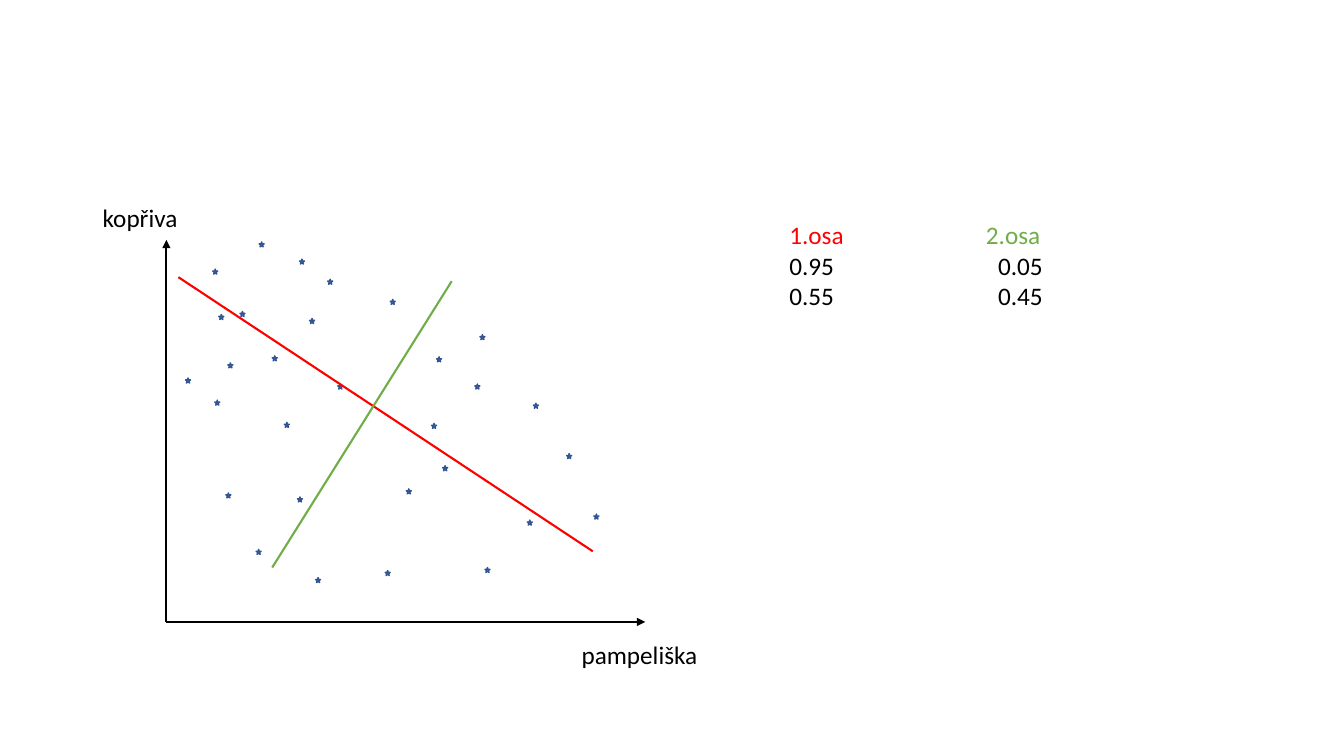
from lxml.etree import SubElement
from pptx import Presentation
from pptx.dml.color import RGBColor
from pptx.enum.shapes import MSO_CONNECTOR, MSO_SHAPE
from pptx.enum.text import MSO_AUTO_SIZE
from pptx.oxml.ns import qn
from pptx.util import Pt

PX = 9144
BLACK = RGBColor(0x00, 0x00, 0x00)
RED = RGBColor(0xFF, 0x00, 0x00)
GREEN = RGBColor(0x70, 0xAD, 0x47)
BLUE = RGBColor(0x44, 0x72, 0xC4)
NAVY = RGBColor(0x32, 0x54, 0x91)

STAR = 5
STARS = [
    (46, 29), (19, 137), (142, 78), (92, 2), (73, 71), (61, 122),
    (48, 159), (222, 59), (59, 251), (170, 143), (306, 143), (263, 182),
    (238, 247), (274, 224), (217, 328), (148, 335), (424, 272), (316, 325),
    (364, 162), (358, 278), (52, 74), (132, 19), (397, 212), (105, 115),
    (160, 39), (117, 181), (311, 94), (89, 307), (268, 116), (130, 255),
]
SCORES = [
    (195, [("1.osa", RED), ("\t2.osa", GREEN)]),
    (207, [("0.95\t0.05", BLACK)]),
    (207, [("0.55\t0.45", BLACK)]),
]


def scale(*sizes):
    """Turn px lengths into EMU."""
    return [size * PX for size in sizes]


def add_text(slide, box, rows, size=18, font="Calibri"):
    """Write rows of (tab stop, coloured runs) in a text box."""
    frame = slide.shapes.add_textbox(*scale(*box)).text_frame
    frame.word_wrap = True
    frame.auto_size = MSO_AUTO_SIZE.SHAPE_TO_FIT_TEXT
    for index, (stop, runs) in enumerate(rows):
        para = frame.add_paragraph() if index else frame.paragraphs[0]
        if stop:
            tabs = SubElement(para._p.get_or_add_pPr(), qn("a:tabLst"))
            SubElement(tabs, qn("a:tab"), pos=str(stop * PX), algn="l")
        for words, color in runs:
            run = para.add_run()
            run.text = words
            run.font.name = font
            run.font.size = Pt(size)
            run.font.color.rgb = color


def add_line(slide, start, end, color, arrow=False):
    """Draw a straight line, with an arrowhead at its end if asked."""
    line = slide.shapes.add_connector(
        MSO_CONNECTOR.STRAIGHT, *scale(*start, *end))
    line.line.color.rgb = color
    line.line.width = Pt(1.5)
    if arrow:
        SubElement(line.line._get_or_add_ln(), qn("a:tailEnd"), type="triangle")
    SubElement(line._element.spPr, qn("a:effectLst"))


def add_star(slide, left, top):
    """Draw one data point as a small star."""
    star = slide.shapes.add_shape(
        MSO_SHAPE.STAR_5_POINT, *scale(left, top, STAR, STAR))
    star.shadow.inherit = False
    star.fill.solid()
    star.fill.fore_color.rgb = BLUE
    star.line.color.rgb = NAVY
    star.line.width = Pt(1)


def add_plot(slide, left, top, width, height):
    """Draw the axes, their names, the stars and the two new axes."""
    def place(x, y):
        """Shift a point of the plot onto the slide."""
        return left + x, top + y

    base = place(0, height)
    add_line(slide, base, place(width, height), BLACK, arrow=True)
    add_line(slide, base, place(0, 0), BLACK, arrow=True)
    for name, x, y in (("pampeliška", width - 73, height + 12),
                       ("kopřiva", -73, -42)):
        add_text(slide, (*place(x, y), 146, 40), [(None, [(name, BLACK)])])
    for point in STARS:
        add_star(slide, *place(*point))
    add_line(slide, place(12, 37), place(423, 309), RED)
    add_line(slide, place(105, 325), place(283, 41), GREEN)


def main():
    """Build and save the slide."""
    deck = Presentation()
    deck.slide_width, deck.slide_height = scale(1333, 750)
    slide = deck.slides.add_slide(deck.slide_layouts[6])
    add_plot(slide, 165, 238, 475, 379)
    add_text(slide, (773, 213, 502, 101), SCORES)
    deck.save("out.pptx")


if __name__ == "__main__":
    main()
